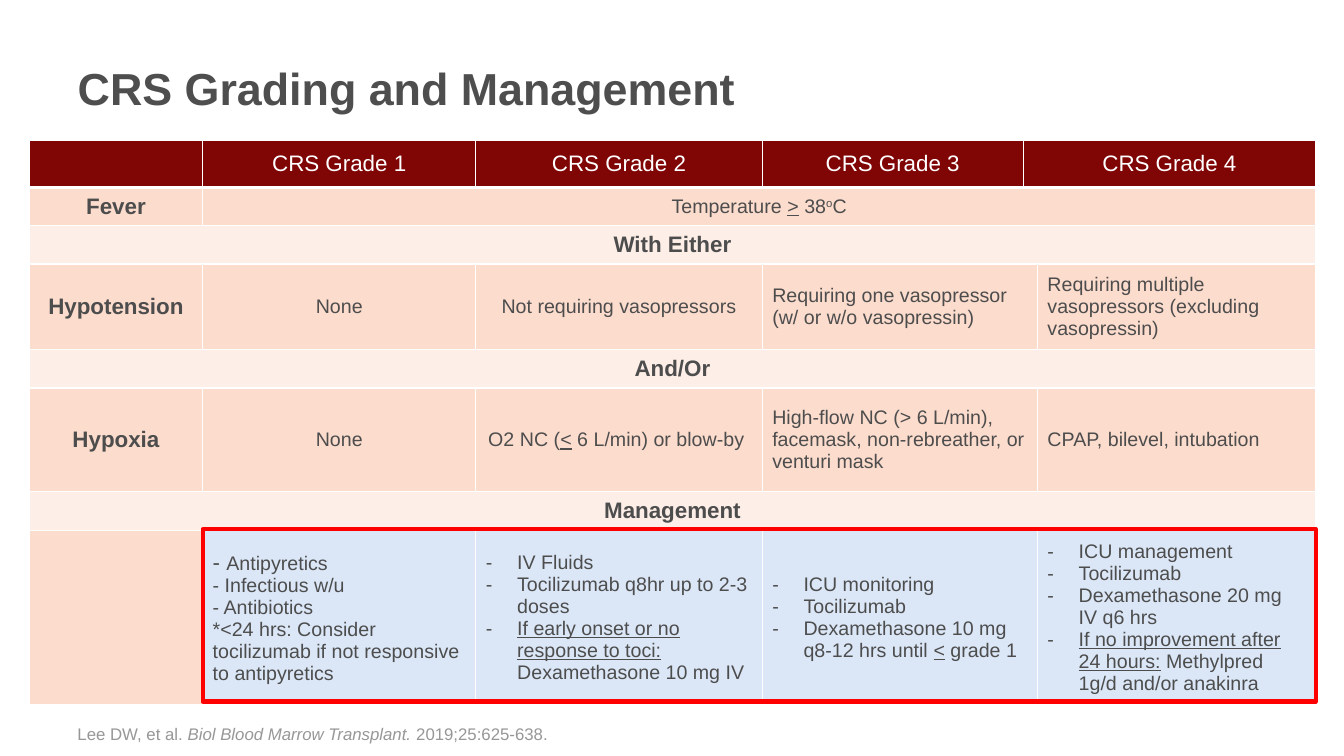
"""Build the CRS grading and management slide."""
from dataclasses import dataclass, field

import pptx
import pptx.dml.color
import pptx.enum.shapes
import pptx.enum.text
import pptx.oxml
import pptx.oxml.ns
import pptx.util

PX = 9144
FONT = "Arial"
ALIGN = pptx.enum.text.PP_ALIGN
MIDDLE = pptx.enum.text.MSO_ANCHOR.MIDDLE
COLORS = {
    "title": "4D4E4D", "text": "4D4D4D", "citation": "979797", "white": "FFFFFF",
    "header": "800606", "grade": "FCDCCD", "band": "FDEEE8", "care": "DBE7F7",
    "highlight": "FF0000",
}
COLUMNS = [172, 271, 284, 259, 14, 276]
ROWS = [47, 38, 38, 85, 38, 103, 38, 169]


@dataclass(frozen=True)
class Piece:
    """A stretch of text with its own formatting."""
    text: str
    font: dict = field(default_factory=dict)
    baseline: int = 0


@dataclass(frozen=True)
class Look:
    """The shared format of a kind of table cell."""
    fill: str
    size: int = 14
    color: str = "text"
    bold: bool = False
    align: ALIGN = ALIGN.CENTER
    bullet: str = ""


@dataclass(frozen=True)
class Entry:
    """One table cell: each paragraph is a list of pieces."""
    look: Look
    paragraphs: list
    span: int = 1


HEADER = Look("header", 16, "white")
LABEL = Look("grade", 16, bold=True)
BAND = Look("band", 16, bold=True)
CENTERED = Look("grade")
LEFT = Look("grade", align=ALIGN.LEFT)
CARE = Look("care", align=ALIGN.LEFT)
CARE_LIST = Look("care", align=ALIGN.LEFT, bullet="-")


def under(text: str) -> Piece:
    """Return underlined text."""
    return Piece(text, {"underline": True})


def entry(look: Look, *paragraphs, span: int = 1) -> Entry:
    """Make a cell from plain strings or lists of strings and pieces."""
    lines = [p if isinstance(p, list) else [p] for p in paragraphs]
    return Entry(look, [[Piece(x) if isinstance(x, str) else x for x in line]
                        for line in lines], span)


GRADING = [
    [entry(HEADER), *[entry(HEADER, f"CRS Grade {n}", span=2 if n == 4 else 1)
                      for n in range(1, 5)]],
    [entry(LABEL, "Fever"),
     entry(CENTERED, ["Temperature ", under(">"), " 38", Piece("o", baseline=30000), "C"],
           span=5)],
    [entry(BAND, "With Either", span=6)],
    [entry(LABEL, "Hypotension"),
     entry(CENTERED, "None"),
     entry(CENTERED, "Not requiring vasopressors"),
     entry(LEFT, "Requiring one vasopressor (w/ or w/o vasopressin)", span=2),
     entry(LEFT, "Requiring multiple vasopressors (excluding vasopressin)")],
    [entry(BAND, "And/Or", span=6)],
    [entry(LABEL, "Hypoxia"),
     entry(CENTERED, "None"),
     entry(CENTERED, ["O2 NC (", under("<"), " 6 L/min) or blow-by "]),
     entry(LEFT, "High-flow NC (> 6 L/min), facemask, non-rebreather, or venturi mask",
           span=2),
     entry(LEFT, "CPAP, bilevel, intubation")],
    [entry(BAND, "Management", span=6)],
    [entry(LABEL),
     entry(CARE, [Piece("- ", {"size": pptx.util.Pt(16)}), "Antipyretics"],
           "- Infectious w/u", "- Antibiotics",
           "*<24 hrs: Consider tocilizumab if not responsive to antipyretics"),
     entry(CARE_LIST, "IV Fluids", "Tocilizumab q8hr up to 2-3 doses",
           [under("If early onset or no response to toci:"), " Dexamethasone 10 mg IV"]),
     entry(CARE_LIST, "ICU monitoring", "Tocilizumab",
           ["Dexamethasone 10 mg q8-12 hrs until ", under("<"), " grade 1"], span=2),
     entry(CARE_LIST, "ICU management", "Tocilizumab", "Dexamethasone 20 mg IV q6 hrs",
           [under("If no improvement after 24 hours:"),
            " Methylpred 1g/d and/or anakinra"])],
]


def rgb(name: str) -> pptx.dml.color.RGBColor:
    """Look up a named colour."""
    return pptx.dml.color.RGBColor.from_string(COLORS[name])


def box(left: int, top: int, width: int, height: int) -> list:
    """Turn px into EMU."""
    return [pptx.util.Emu(v * PX) for v in (left, top, width, height)]


def write(paragraph, pieces: list, size: int, color: str, bold: bool = False) -> None:
    """Add formatted runs to a paragraph."""
    for piece in pieces:
        run = paragraph.add_run()
        run.text = piece.text
        formats = {"name": FONT, "size": pptx.util.Pt(size), "bold": bold, **piece.font}
        for key, value in formats.items():
            setattr(run.font, key, value)
        run.font.color.rgb = rgb(color)
        if piece.baseline:
            run._r.get_or_add_rPr().set("baseline", str(piece.baseline))


def add_bullet(paragraph, mark: str) -> None:
    """Give a paragraph a hanging bullet."""
    properties = paragraph._p.get_or_add_pPr()
    for key, value in {"marL": 31 * PX, "indent": -31 * PX}.items():
        properties.set(key, str(value))
    for tag in (f'buFont {{}} typeface="{FONT}"', f'buChar {{}} char="{mark}"'):
        properties.append(pptx.oxml.parse_xml(
            f'<a:{tag.format(pptx.oxml.ns.nsdecls("a"))}/>'))


def add_borders(cell, bottom: int) -> None:
    """Draw white cell borders, widths in points."""
    for side, points in {"L": 1, "R": 1, "T": 1, "B": bottom}.items():
        cell._tc.get_or_add_tcPr().append(pptx.oxml.parse_xml(
            f'<a:ln{side} {pptx.oxml.ns.nsdecls("a")} w="{points * 12700}"><a:solidFill>'
            f'<a:srgbClr val="{COLORS["white"]}"/></a:solidFill></a:ln{side}>'))


def fill_cell(cell, content: Entry) -> None:
    """Write one cell's fill and text."""
    look = content.look
    cell.fill.solid()
    cell.fill.fore_color.rgb = rgb(look.fill)
    cell.vertical_anchor = MIDDLE
    for index, pieces in enumerate(content.paragraphs):
        frame = cell.text_frame
        paragraph = frame.add_paragraph() if index else frame.paragraphs[0]
        paragraph.alignment = look.align
        if look.bullet:
            add_bullet(paragraph, look.bullet)
        write(paragraph, pieces, look.size, look.color, look.bold)


def add_grading(slide) -> None:
    """Add the grading table."""
    grading = slide.shapes.add_table(
        len(ROWS), len(COLUMNS), *box(29, 139, sum(COLUMNS), sum(ROWS))).table
    grading.horz_banding = False
    for column, width in zip(grading.columns, COLUMNS):
        column.width = pptx.util.Emu(width * PX)
    for row, height in zip(grading.rows, ROWS):
        row.height = pptx.util.Emu(height * PX)
    for r, entries in enumerate(GRADING):
        for c in range(len(COLUMNS)):
            add_borders(grading.cell(r, c), 1 if r else 3)
        start = 0
        for content in entries:
            cell = grading.cell(r, start)
            if content.span > 1:
                cell.merge(grading.cell(r, start + content.span - 1))
            fill_cell(cell, content)
            start += content.span


def main() -> None:
    """Build and save the slide."""
    deck = pptx.Presentation()
    deck.slide_width, deck.slide_height = box(0, 0, 1333, 750)[2:]
    slide = deck.slides.add_slide(deck.slide_layouts[5])

    heading = slide.shapes.title
    heading.left, heading.top, heading.width, heading.height = box(67, 22, 1175, 130)
    heading.text_frame.vertical_anchor = MIDDLE
    heading.text_frame.paragraphs[0].alignment = ALIGN.LEFT
    write(heading.text_frame.paragraphs[0], [Piece("CRS Grading and Management")],
          32, "title", True)

    citation = slide.shapes.add_textbox(*box(67, 695, 1175, 48)).text_frame
    citation.word_wrap = True
    citation.vertical_anchor = pptx.enum.text.MSO_ANCHOR.BOTTOM
    write(citation.paragraphs[0],
          [Piece("Lee DW, et al. "),
           Piece("Biol Blood Marrow Transplant. ", {"italic": True}),
           Piece("2019;25:625-638.")], 12, "citation")

    add_grading(slide)

    highlight = slide.shapes.add_shape(
        pptx.enum.shapes.MSO_SHAPE.RECTANGLE, *box(201, 525, 1104, 171))
    highlight.shadow.inherit = False
    highlight.fill.background()
    highlight.line.color.rgb = rgb("highlight")
    highlight.line.width = pptx.util.Pt(3)

    deck.save("out.pptx")


if __name__ == "__main__":
    main()
